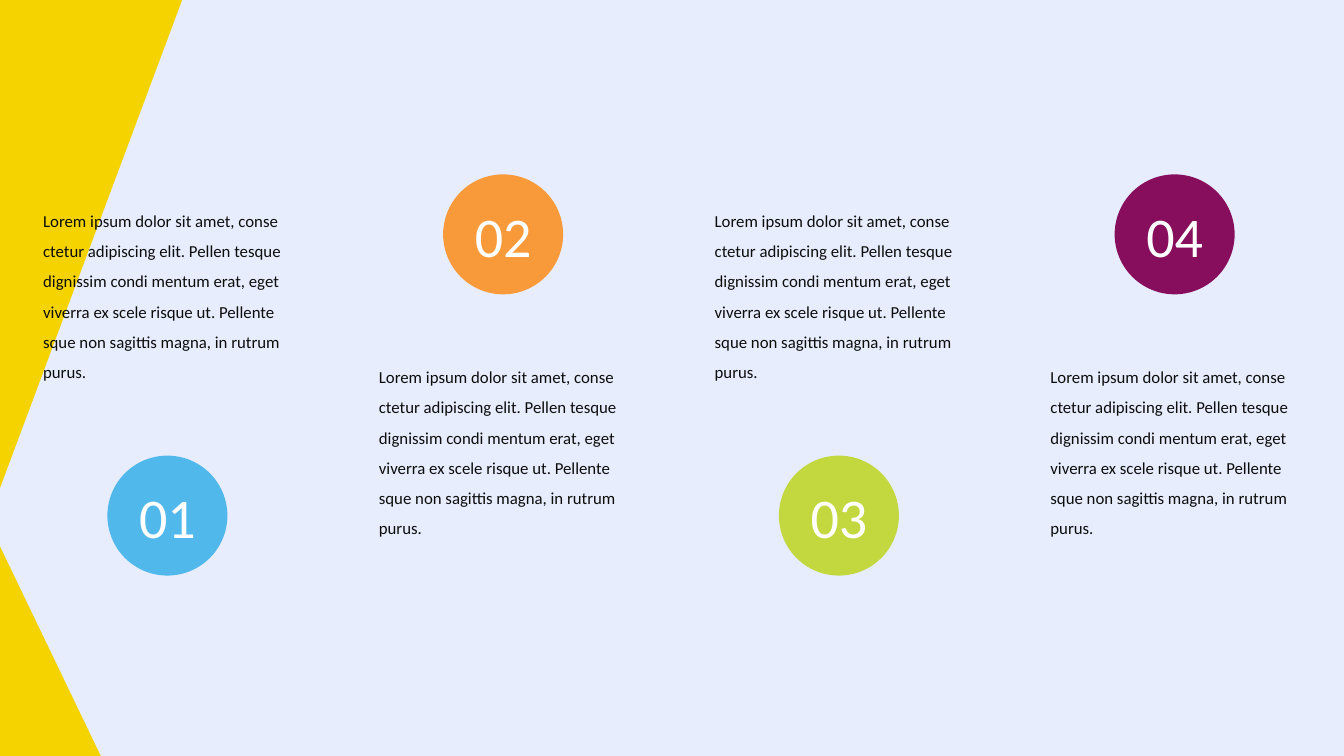
from dataclasses import dataclass

from pptx import Presentation
from pptx.dml.color import RGBColor
from pptx.enum.shapes import MSO_SHAPE
from pptx.enum.text import MSO_AUTO_SIZE, PP_ALIGN
from pptx.util import Inches, Pt


@dataclass(frozen=True)
class Theme:
    font: str = "Calibri"
    background: str = "E7EDFD"
    corner: str = "F4D300"
    text: str = "0D0D0D"
    number: str = "FFFFFF"
    circles: tuple = ("51B8EB", "F89A3A", "C3D83F", "870E5D")
    body_size: int = 12
    number_size: int = 40


THEME = Theme()
BODY = (
    "Lorem ipsum dolor sit amet, conse ctetur adipiscing elit. Pellen tesque "
    "dignissim condi mentum erat, eget viverra ex scele risque ut. Pellente "
    "sque non sagittis magna, in rutrum purus."
)
COLUMN_LEFT, COLUMN_PITCH, COLUMN_WIDTH = 0.33, 3.33, 2.66
CIRCLE_SIZE = 1.19


def add_filled(slide, preset, left, top, width, height, color):
    sp = slide.shapes.add_shape(
        preset, Inches(left), Inches(top), Inches(width), Inches(height))
    sp.shadow.inherit = False
    sp.fill.solid()
    sp.fill.fore_color.rgb = RGBColor.from_string(color)
    sp.line.fill.background()
    return sp


def add_text(slide, text, left, top, width, height, size, color,
             align=PP_ALIGN.LEFT, spacing=1.0):
    box = slide.shapes.add_textbox(
        Inches(left), Inches(top), Inches(width), Inches(height))
    tf = box.text_frame
    tf.word_wrap = True
    tf.auto_size = MSO_AUTO_SIZE.SHAPE_TO_FIT_TEXT
    p = tf.paragraphs[0]
    p.alignment = align
    p.line_spacing = spacing
    r = p.add_run()
    r.text = text
    r.font.name = THEME.font
    r.font.size = Pt(size)
    r.font.color.rgb = RGBColor.from_string(color)


def add_corners(slide, left, top, height):
    """Place the yellow triangles along the left edge of the given area."""
    add_filled(slide, MSO_SHAPE.RIGHT_TRIANGLE,
               left, top + height - 2.08, 1, 2.08, THEME.corner)
    upper = add_filled(slide, MSO_SHAPE.RIGHT_TRIANGLE,
                       left, top - 0.01, 1.81, 4.85, THEME.corner)
    upper.rotation = 180
    upper._element.spPr.xfrm.set("flipH", "1")


def add_step(slide, number, color, left, width, text_top, circle_top):
    """Place one column: a paragraph and a numbered circle centred on it."""
    circle_left = left + (width - CIRCLE_SIZE) / 2
    add_filled(slide, MSO_SHAPE.OVAL, circle_left, circle_top,
               CIRCLE_SIZE, CIRCLE_SIZE, color)
    add_text(slide, BODY, left, text_top, width, 1.89,
             THEME.body_size, THEME.text, spacing=1.5)
    add_text(slide, f"{number:02d}", circle_left, circle_top + 0.22,
             CIRCLE_SIZE, 0.77, THEME.number_size, THEME.number,
             PP_ALIGN.CENTER)


def main():
    prs = Presentation()
    prs.slide_width, prs.slide_height = Inches(13.33), Inches(7.5)
    s = prs.slides.add_slide(prs.slide_layouts[6])
    s.background.fill.solid()
    s.background.fill.fore_color.rgb = RGBColor.from_string(THEME.background)

    add_corners(s, 0, 0, 7.5)
    for i, color in enumerate(THEME.circles):
        text_top, circle_top = (3.49, 1.73) if i % 2 else (1.94, 4.52)
        add_step(s, i + 1, color, COLUMN_LEFT + i * COLUMN_PITCH,
                 COLUMN_WIDTH, text_top, circle_top)
    prs.save("out.pptx")


if __name__ == "__main__":
    main()
